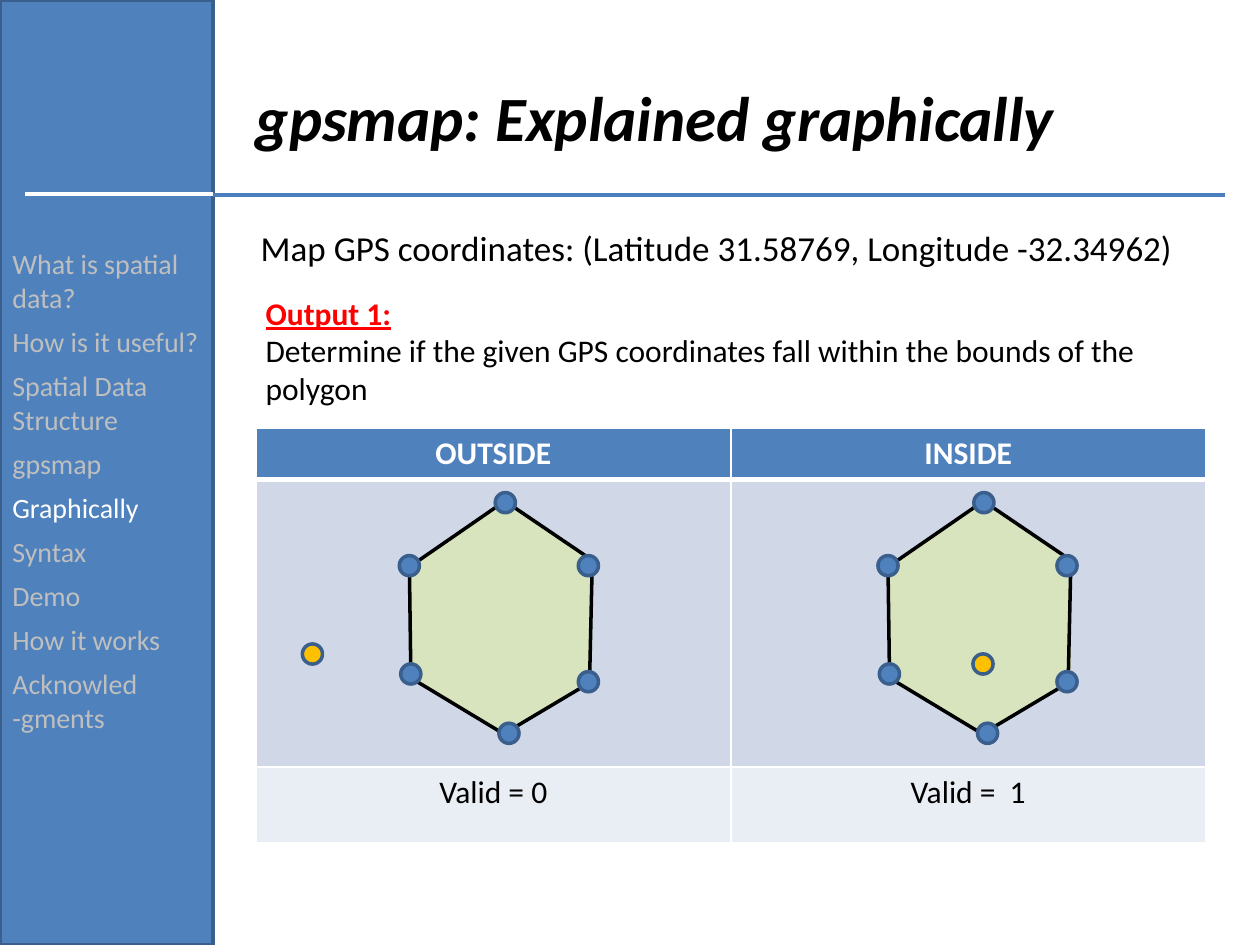
from dataclasses import dataclass

from lxml.etree import SubElement
from pptx import Presentation
from pptx.dml.color import RGBColor
from pptx.enum.shapes import MSO_CONNECTOR, MSO_SHAPE
from pptx.enum.text import MSO_ANCHOR, MSO_AUTO_SIZE, PP_ALIGN
from pptx.oxml.ns import qn
from pptx.slide import Slide
from pptx.util import Pt

TOPICS = ["What is spatial data?", "How is it useful?", "Spatial Data Structure", "gpsmap",
          "Graphically", "Syntax", "Demo", "How it works", "Acknowled -gments"]
CURRENT_TOPIC = "Graphically"
TABLE_ROWS = [("OUTSIDE", "INSIDE"), ("", ""), ("Valid = 0", "Valid =  1")]
ROW_HEIGHTS = [29.2, 164.3, 43.4]
COLUMN_WIDTH = 271.4
POLYGON_STEP = 273.5
NODE_SIZE = 11.5
POLYGON_EDGES = [
    (335.5, 391, 294.5, 415.4), (294.5, 423.4, 238.3, 389.5), (337, 385.2, 338.4, 322.6),
    (234.7, 379.4, 234, 328.3), (342, 322.6, 288, 286), (229.7, 326.9, 292.3, 283.7)]
POLYGON_NODES = [(283, 281.5), (228.2, 317.5), (229, 379.4),
                 (285.1, 413.3), (330.5, 383.8), (330.5, 317.5)]
GPS_POINTS = [(172.8, 368), (556, 373.7)]


def color(hex_string):
    return RGBColor.from_string(hex_string)


@dataclass
class SlideBuilder:
    """Holds the style and the current slide and adds each kind of element."""
    page: Slide
    font: str = "Calibri"
    blue: str = "4F81BD"
    outline: str = "3A5F8C"
    green: str = "D7E4BD"
    yellow: str = "FFC000"
    black: str = "000000"
    white: str = "FFFFFF"
    gray: str = "BFBFBF"
    red: str = "FF0000"
    line_width: float = 2

    def place(self, item, left, top, width, height):
        item.left, item.top = Pt(left), Pt(top)
        item.width, item.height = Pt(width), Pt(height)

    def format(self, paragraph, size, hex_string, bold=False, italic=False, underline=False):
        for span in paragraph.runs:
            span.font.name, span.font.size = self.font, Pt(size)
            span.font.color.rgb = color(hex_string)
            span.font.bold, span.font.italic = bold, italic
            span.font.underline = underline

    def title(self, text, *bounds):
        box = self.page.shapes.title
        self.place(box, *bounds)
        box.text_frame.text = text
        box.text_frame.auto_size = MSO_AUTO_SIZE.NONE
        box.text_frame.vertical_anchor = MSO_ANCHOR.MIDDLE
        para = box.text_frame.paragraphs[0]
        para.alignment = PP_ALIGN.LEFT
        self.format(para, 36, self.black, bold=True, italic=True)

    def body(self, text, *bounds):
        box = self.page.placeholders[1]
        self.place(box, *bounds)
        box.text_frame.text = text
        box.text_frame.auto_size = MSO_AUTO_SIZE.NONE
        para = box.text_frame.paragraphs[0]
        properties = para._p.get_or_add_pPr()
        properties.set("marL", str(Pt(8.6)))
        properties.set("indent", "0")
        SubElement(properties, qn("a:buNone"))
        para.space_before = Pt(0)
        self.format(para, 20, self.black)

    def shape(self, kind, bounds, fill, line=None):
        item = self.page.shapes.add_shape(kind, *map(Pt, bounds))
        item.shadow.inherit = False
        item.fill.solid()
        item.fill.fore_color.rgb = color(fill)
        if line:
            item.line.color.rgb = color(line)
            item.line.width = Pt(self.line_width)
        else:
            item.line.fill.background()
        return item

    def line(self, bounds, hex_string):
        item = self.page.shapes.add_connector(MSO_CONNECTOR.STRAIGHT, *map(Pt, bounds))
        item.line.color.rgb = color(hex_string)
        item.line.width = Pt(self.line_width)
        SubElement(item._element.spPr, qn("a:effectLst"))

    def node(self, left, top, fill):
        self.shape(MSO_SHAPE.OVAL, (left, top, NODE_SIZE, NODE_SIZE), fill, self.outline)

    def sidebar(self, topics, current):
        bar = self.shape(MSO_SHAPE.RECTANGLE, (0, 0, 121.7, 540), self.blue, self.outline)
        frame = bar.text_frame
        frame.word_wrap = True
        frame.vertical_anchor = MSO_ANCHOR.TOP
        frame.margin_top = Pt(141)
        frame.text = "\n".join(topics)
        for index, para in enumerate(frame.paragraphs):
            para.alignment = PP_ALIGN.LEFT
            para.space_before = Pt(6 if index else 0)
            self.format(para, 16, self.white if para.text == current else self.gray)

    def output_text(self, heading, text, *bounds):
        frame = self.page.shapes.add_textbox(*map(Pt, bounds)).text_frame
        frame.word_wrap = True
        frame.auto_size = MSO_AUTO_SIZE.SHAPE_TO_FIT_TEXT
        frame.text = f"{heading}\n{text}"
        self.format(frame.paragraphs[0], 18, self.red, bold=True, underline=True)
        self.format(frame.paragraphs[1], 18, self.black)

    def cell_borders(self, cell, bottom_width):
        properties = cell._tc.get_or_add_tcPr()
        widths = {"a:lnL": 1, "a:lnR": 1, "a:lnT": 1, "a:lnB": bottom_width}
        for position, (tag, width) in enumerate(widths.items()):
            border = SubElement(properties, qn(tag), w=str(Pt(width)))
            fill = SubElement(border, qn("a:solidFill"))
            SubElement(fill, qn("a:srgbClr"), val=self.white)
            properties.insert(position, border)

    def table(self, rows, left, top):
        columns = len(rows[0])
        table = self.page.shapes.add_table(
            len(rows), columns, Pt(left), Pt(top),
            Pt(COLUMN_WIDTH * columns), Pt(sum(ROW_HEIGHTS))).table
        fills = [self.blue, "D0D8E8", "E9EDF4"]
        for row_index, texts in enumerate(rows):
            table.rows[row_index].height = Pt(ROW_HEIGHTS[row_index])
            header = row_index == 0
            for column_index, text in enumerate(texts):
                cell = table.cell(row_index, column_index)
                cell.fill.solid()
                cell.fill.fore_color.rgb = color(fills[row_index])
                self.cell_borders(cell, 3 if header else 1)
                cell.text_frame.text = text
                para = cell.text_frame.paragraphs[0]
                para.alignment = PP_ALIGN.CENTER
                self.format(para, 18, self.white if header else self.black, bold=header)

    def polygon(self, shift):
        lower = self.shape(MSO_SHAPE.ISOSCELES_TRIANGLE,
                           (229.7 + shift, 385.2, 111.6, 33.8), self.green)
        lower.rotation = 180
        lower.adjustments[0] = 0.46
        self.shape(MSO_SHAPE.ISOSCELES_TRIANGLE, (234.7 + shift, 286.6, 107.3, 36.7), self.green)
        self.shape(MSO_SHAPE.RECTANGLE, (234 + shift, 322.6, 104.4, 62.6), self.green)
        for x1, y1, x2, y2 in POLYGON_EDGES:
            self.line((x1 + shift, y1, x2 + shift, y2), self.black)
        for left, top in POLYGON_NODES:
            self.node(left + shift, top, self.blue)


def main():
    deck = Presentation()
    deck.slide_width, deck.slide_height = Pt(720), Pt(540)
    builder = SlideBuilder(deck.slides.add_slide(deck.slide_layouts[1]))
    builder.title("gpsmap: Explained graphically", 139, 21.6, 545, 90)
    builder.body("Map GPS coordinates: (Latitude 31.58769, Longitude -32.34962)",
                 133.2, 126, 566.6, 393)
    builder.table(TABLE_ROWS, 146.2, 244.8)
    builder.sidebar(TOPICS, CURRENT_TOPIC)
    builder.line((121.7, 111.4, 699.8, 111.4), "4B7EBC")
    builder.line((14.4, 111, 121.7, 111), builder.white)
    builder.output_text(
        "Output 1:",
        "Determine if the given GPS coordinates fall within the bounds of the polygon",
        144.7, 164.2, 555.8, 72.7)
    for index, (left, top) in enumerate(GPS_POINTS):
        builder.polygon(index * POLYGON_STEP)
        builder.node(left, top, builder.yellow)
    deck.save("out.pptx")


if __name__ == "__main__":
    main()
